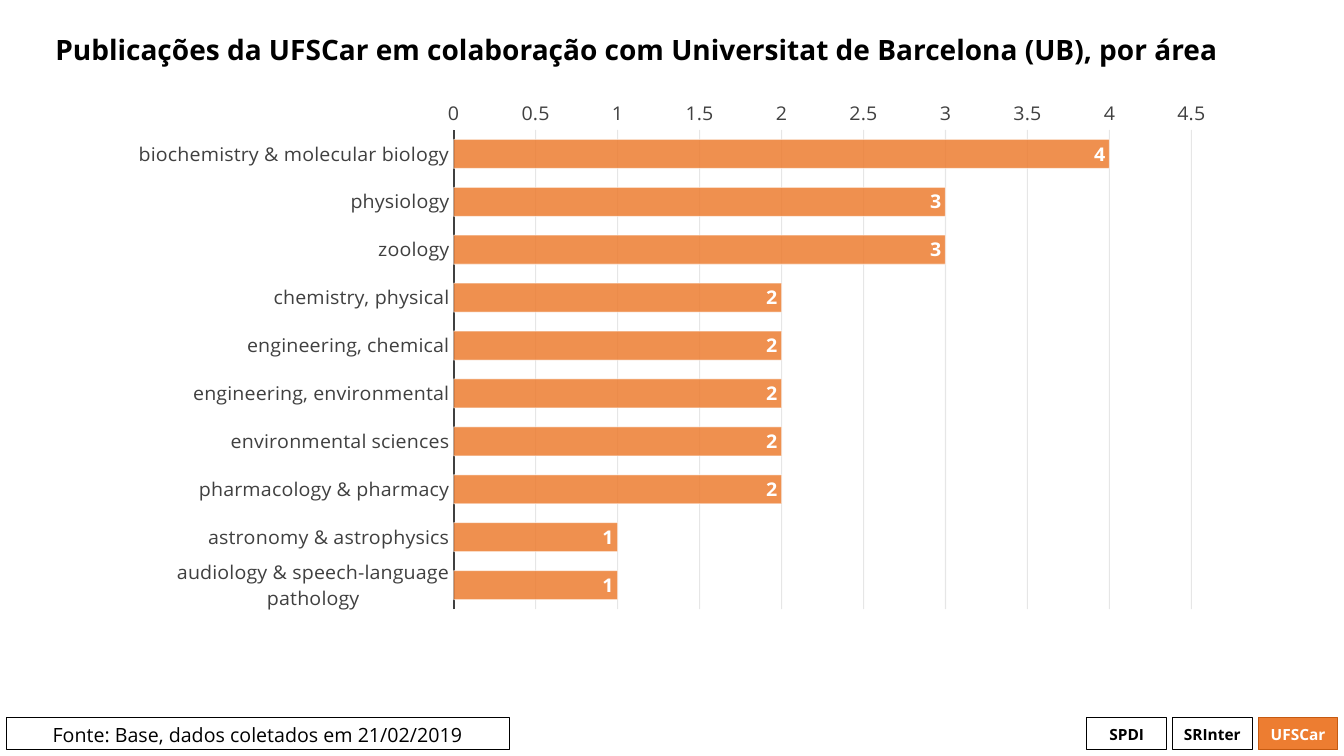
import pptx
import pptx.chart.data
import pptx.dml.color
import pptx.enum.chart
import pptx.enum.shapes
import pptx.enum.text
import pptx.oxml
import pptx.oxml.ns
import pptx.util

FONT = "Open Sans"
ORANGE, DARK_ORANGE, GRAY = "ED7D31", "C55A11", "404040"
Inches, Pt = pptx.util.Inches, pptx.util.Pt
Anchor = pptx.enum.text.MSO_ANCHOR
Align = pptx.enum.text.PP_ALIGN


def paint(color_format, color, alpha=100):
    """Set a hex colour, with alpha as a percentage, on a fill or a line's fill."""
    color_format.solid()
    color_format.fore_color.rgb = pptx.dml.color.RGBColor.from_string(color)
    if alpha < 100:
        node = color_format._xPr.find(".//" + pptx.oxml.ns.qn("a:srgbClr"))
        node.append(pptx.oxml.parse_xml(
            f'<a:alpha {pptx.oxml.ns.nsdecls("a")} val="{alpha * 1000}"/>'))


def write(box, text, size, color="000000", bold=False, align=Align.CENTER,
          anchor=Anchor.MIDDLE, spacing=None):
    frame = box.text_frame
    frame.word_wrap = True
    frame.vertical_anchor = anchor
    para = frame.paragraphs[0]
    para.alignment = align
    para.line_spacing = spacing
    span = para.add_run()
    span.text = text
    span.font.name, span.font.size, span.font.bold = FONT, Pt(size), bold
    paint(span.font.fill, color)


deck = pptx.Presentation()
deck.slide_width, deck.slide_height = Inches(13.33), Inches(7.5)
slide = deck.slides.add_slide(deck.slide_layouts[6])

# Footer: three badges in equal columns on the right, the data source on the left
badge_left, badge_step, badge_width = 10.78, 0.85, 0.79
footer = [
    (badge_left + column * badge_step, badge_width, name, fill, edge, ink)
    for column, (name, fill, edge, ink) in enumerate([
        ("SPDI", None, "000000", "000000"),
        ("SRInter", None, "000000", "000000"),
        ("UFSCar", ORANGE, DARK_ORANGE, "FFFFFF"),
    ])
]
footer.append((0.06, 4.99, "Fonte: Base, dados coletados em 21/02/2019",
               None, "000000", "000000"))
for left, width, text, fill, edge, ink in footer:
    box = slide.shapes.add_shape(
        pptx.enum.shapes.MSO_SHAPE.RECTANGLE,
        Inches(left), Inches(7.12), Inches(width), Inches(0.32))
    box.shadow.inherit = False
    if fill:
        paint(box.fill, fill)
    else:
        box.fill.background()
    paint(box.line.fill, edge)
    box.line.width = Pt(0.75)
    if width == badge_width:
        write(box, text, 11, ink, bold=True)
    else:
        write(box, text, 14, ink, anchor=Anchor.TOP)

title = slide.shapes.add_textbox(Inches(0.45), Inches(0.06), Inches(12.41), Inches(0.91))
write(title, "Publicações da UFSCar em colaboração com Universitat de Barcelona (UB), por área",
      20, bold=True, align=Align.LEFT, spacing=0.9)

# Publications by area
publications = {
    "biochemistry & molecular biology": 4,
    "physiology": 3,
    "zoology": 3,
    "chemistry, physical": 2,
    "engineering, chemical": 2,
    "engineering, environmental": 2,
    "environmental sciences": 2,
    "pharmacology & pharmacy": 2,
    "astronomy & astrophysics": 1,
    "audiology & speech-language pathology": 1,
}
data = pptx.chart.data.CategoryChartData()
data.categories = list(publications)
data.add_series("Series 1", list(publications.values()))
chart = slide.shapes.add_chart(
    pptx.enum.chart.XL_CHART_TYPE.BAR_CLUSTERED,
    Inches(1.15), Inches(0.99), Inches(11.02), Inches(5.51), data).chart
chart.has_legend = False
chart.has_title = False
chart.font.name, chart.font.size = FONT, Pt(14)

areas, counts = chart.category_axis, chart.value_axis
for axis in (areas, counts):
    axis.major_tick_mark = axis.minor_tick_mark = pptx.enum.chart.XL_TICK_MARK.NONE
    axis.tick_labels.font.name, axis.tick_labels.font.size = FONT, Pt(14)
    paint(axis.tick_labels.font.fill, GRAY)
areas.reverse_order = True
areas.crosses = pptx.enum.chart.XL_AXIS_CROSSES.MAXIMUM
areas.has_major_gridlines = False
paint(areas.format.line.fill, GRAY)
areas.format.line.width = Pt(1.5)
counts.minimum_scale, counts.maximum_scale, counts.major_unit = 0, 4.5, 0.5
counts.tick_labels.number_format = "General"
counts.tick_labels.number_format_is_linked = False
counts.format.line.fill.background()
counts.has_major_gridlines = True
paint(counts.major_gridlines.format.line.fill, "0D0D0D", alpha=10)
counts.major_gridlines.format.line.width = Pt(0.75)

plot = chart.plots[0]
plot.gap_width = 65
plot.vary_by_categories = False
bars = plot.series[0]
paint(bars.format.fill, ORANGE, alpha=85)
paint(bars.format.line.fill, "FFFFFF", alpha=50)
bars.format.line.width = Pt(0.75)
labels = bars.data_labels
labels.show_value = True
labels.position = pptx.enum.chart.XL_LABEL_POSITION.INSIDE_END
labels.font.name, labels.font.size, labels.font.bold = FONT, Pt(14), True
paint(labels.font.fill, "FFFFFF")

# Place of the plot as shares of the chart
plot_area = chart._chartSpace.chart.plotArea
for layout in plot_area.findall(pptx.oxml.ns.qn("c:layout")):
    plot_area.remove(layout)
shares = "".join(f'<c:{key} val="{share}"/>' for key, share in
                 [("x", 0.304), ("y", 0.02), ("w", 0.664), ("h", 0.894)])
plot_area.insert(0, pptx.oxml.parse_xml(
    f'<c:layout {pptx.oxml.ns.nsdecls("c")}><c:manualLayout>'
    '<c:layoutTarget val="inner"/><c:xMode val="edge"/><c:yMode val="edge"/>'
    f'{shares}</c:manualLayout></c:layout>'))

deck.save("out.pptx")
